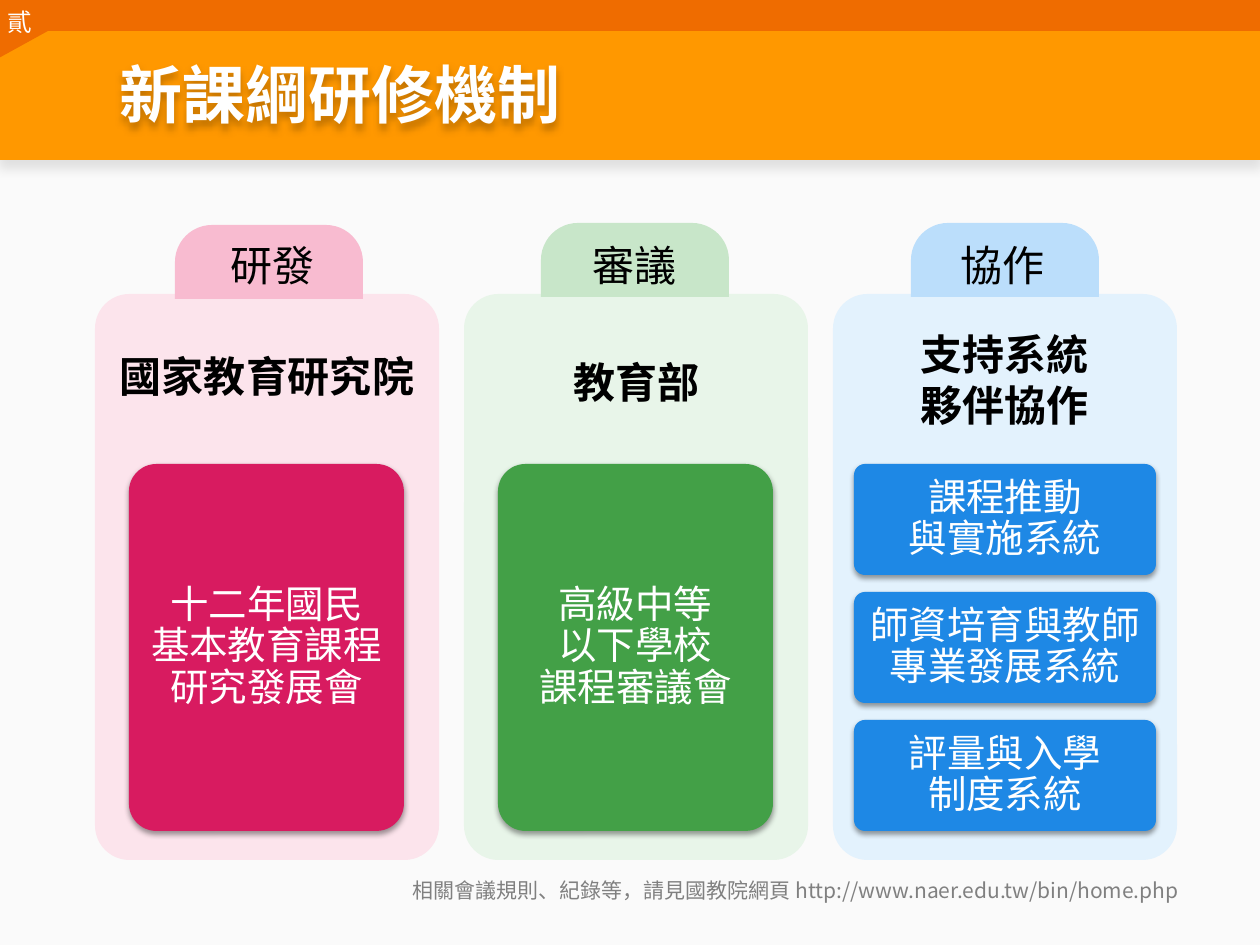
from dataclasses import dataclass

from lxml import etree
from pptx import Presentation
from pptx.dml.color import RGBColor
from pptx.enum.shapes import MSO_SHAPE
from pptx.enum.text import MSO_ANCHOR, PP_ALIGN
from pptx.oxml.ns import qn
from pptx.util import Emu, Pt

RECT = MSO_SHAPE.RECTANGLE
ROUND = MSO_SHAPE.ROUNDED_RECTANGLE
TAB = MSO_SHAPE.ROUND_2_SAME_RECTANGLE
LEFT, CENTER, RIGHT = PP_ALIGN.LEFT, PP_ALIGN.CENTER, PP_ALIGN.RIGHT
TOP, MIDDLE = MSO_ANCHOR.TOP, MSO_ANCHOR.MIDDLE

FONT = "Noto Sans CJK SC"
SCALE = 914400 / 126
COLORS = {
    "paper": "FAFAFA", "band": "FF9800", "strip": "EF6C00",
    "white": "FFFFFF", "black": "000000", "gray": "808080",
    "pink": "FCE4EC", "pink tab": "F8BBD0", "pink card": "D81B60",
    "green": "E8F5E9", "green tab": "C8E6C9", "green card": "43A047",
    "blue": "E3F2FD", "blue tab": "BBDEFB", "blue card": "1E88E5",
}

PANEL_X, PANEL_Y, PANEL_W, PANEL_H = 95, 294, 344, 566
STEP = 369
HEAD_H = 170
CARD_Y, CARD_SPAN, CARD_GAP = 464, 367, 17


@dataclass(frozen=True)
class Box:
    x: int
    y: int
    w: int
    h: int


@dataclass(frozen=True)
class Shade:
    alpha: int
    blur: float
    dist: float


@dataclass(frozen=True)
class Column:
    hue: str
    label: str
    head: str
    cards: tuple[str, ...]
    card_w: int
    tab: Box
    label_x: int
    lead: float | Pt


CARD_SHADE = Shade(38, 3.1, 1.6)
BAND_SHADE = Shade(10, 6, 4)
TITLE_SHADE = Shade(25, 4, 3)

COLUMNS = (
    Column("pink", "研發", "國家教育研究院",
           ("十二年國民\n基本教育課程\n研究發展會",),
           275, Box(175, 225, 188, 74), 218, 0.9),
    Column("green", "審議", "教育部",
           ("高級中等\n以下學校\n課程審議會",),
           275, Box(541, 223, 188, 74), 580, Pt(32)),
    Column("blue", "協作", "支持系統\n夥伴協作",
           ("課程推動\n與實施系統", "師資培育與教師專業發展系統",
            "評量與入學\n制度系統"),
           302, Box(911, 223, 188, 74), 948, Pt(28.8)),
)


def px(n: float) -> Emu:
    return Emu(round(n * SCALE))


def rgb(name: str) -> RGBColor:
    return RGBColor.from_string(COLORS[name])


def place(box: Box) -> tuple[Emu, Emu, Emu, Emu]:
    return px(box.x), px(box.y), px(box.w), px(box.h)


def shade(shape, style: Shade) -> None:
    """Give the shape a soft black shadow that falls straight down."""
    shape.shadow.inherit = False
    effects = shape._element.spPr.find(qn("a:effectLst"))
    outer = etree.SubElement(
        effects, qn("a:outerShdw"), blurRad=str(Pt(style.blur)),
        dist=str(Pt(style.dist)), dir="5400000", algn="t", rotWithShape="0")
    color = etree.SubElement(outer, qn("a:srgbClr"), val=COLORS["black"])
    etree.SubElement(color, qn("a:alpha"), val=str(style.alpha * 1000))


def paint(shape, color: str) -> None:
    shape.shadow.inherit = False
    shape.fill.solid()
    shape.fill.fore_color.rgb = rgb(color)
    shape.line.fill.background()


def block(slide, kind, box: Box, color: str, adjust: tuple[float, ...] = ()):
    shape = slide.shapes.add_shape(kind, *place(box))
    paint(shape, color)
    for i, value in enumerate(adjust):
        shape.adjustments[i] = value
    return shape


def write(shape, text: str, *, size: int, color: str, bold: bool = False,
          align=LEFT, anchor=TOP, lead=None, wrap: bool = True,
          pad: tuple[int, int] = (13, 6)) -> None:
    frame = shape.text_frame
    frame.word_wrap = wrap
    frame.vertical_anchor = anchor
    frame.margin_left = frame.margin_right = px(pad[0])
    frame.margin_top = frame.margin_bottom = px(pad[1])
    para = frame.paragraphs[0]
    para.text = text
    para.alignment = align
    if lead is not None:
        para.line_spacing = lead
    for run in para.runs:
        font = run.font
        font.name, font.size, font.bold = FONT, Pt(size), bold
        font.color.rgb = rgb(color)
        latin = run._r.rPr.find(qn("a:latin"))
        latin.addnext(etree.Element(qn("a:ea"), typeface=FONT))


def label(slide, box: Box, text: str, **style):
    shape = slide.shapes.add_textbox(*place(box))
    write(shape, text, **style)
    return shape


def frame(slide) -> None:
    """Draw the paper, the title band and the numbered corner."""
    block(slide, RECT, Box(-1, 55, 1263, 890), "paper")
    shade(block(slide, RECT, Box(-1, 0, 1262, 160), "band"), BAND_SHADE)
    block(slide, RECT, Box(-1, -3, 1262, 34), "strip")
    path = slide.shapes.build_freeform(-1, 31, scale=SCALE)
    path.add_line_segments([(-1, 58), (48, 31)], close=True)
    paint(path.convert_to_shape(), "strip")
    label(slide, Box(-5, 1, 50, 43), "貳", size=14, color="white", wrap=False)


def panel(slide, col: Column, x: int) -> None:
    block(slide, ROUND, Box(x, PANEL_Y, PANEL_W, PANEL_H), col.hue, (0.1,))
    label(slide, Box(x, PANEL_Y, PANEL_W, HEAD_H), col.head, size=24,
          color="black", bold=True, align=CENTER, anchor=MIDDLE,
          lead=col.lead, pad=(13, 13))
    count = len(col.cards)
    high = (CARD_SPAN - CARD_GAP * (count - 1)) // count
    left = x + (PANEL_W - col.card_w) // 2
    for i, text in enumerate(col.cards):
        box = Box(left, CARD_Y + i * (high + CARD_GAP), col.card_w, high)
        card = block(slide, ROUND, box, f"{col.hue} card", (0.1,))
        shade(card, CARD_SHADE)
        write(card, text, size=22, color="white", align=CENTER,
              anchor=MIDDLE, lead=0.9, pad=(8, 6))
    block(slide, TAB, col.tab, f"{col.hue} tab", (0.5, 0))
    label(slide, Box(col.label_x, 234, 111, 63), col.label, size=24,
          color="black", wrap=False)


def main() -> None:
    deck = Presentation()
    deck.slide_width, deck.slide_height = px(1260), px(945)
    slide = deck.slides.add_slide(deck.slide_layouts[6])
    frame(slide)
    for i, col in enumerate(COLUMNS):
        panel(slide, col, PANEL_X + i * STEP)
    label(slide, Box(44, 872, 1148, 38),
          "相關會議規則、紀錄等，請見國教院網頁 http://www.naer.edu.tw/bin/home.php",
          size=12, color="gray", align=RIGHT)
    title = label(slide, Box(106, 26, 1154, 134), "新課綱研修機制", size=36,
                  color="white", bold=True, anchor=MIDDLE)
    shade(title, TITLE_SHADE)
    deck.save("out.pptx")


if __name__ == "__main__":
    main()
